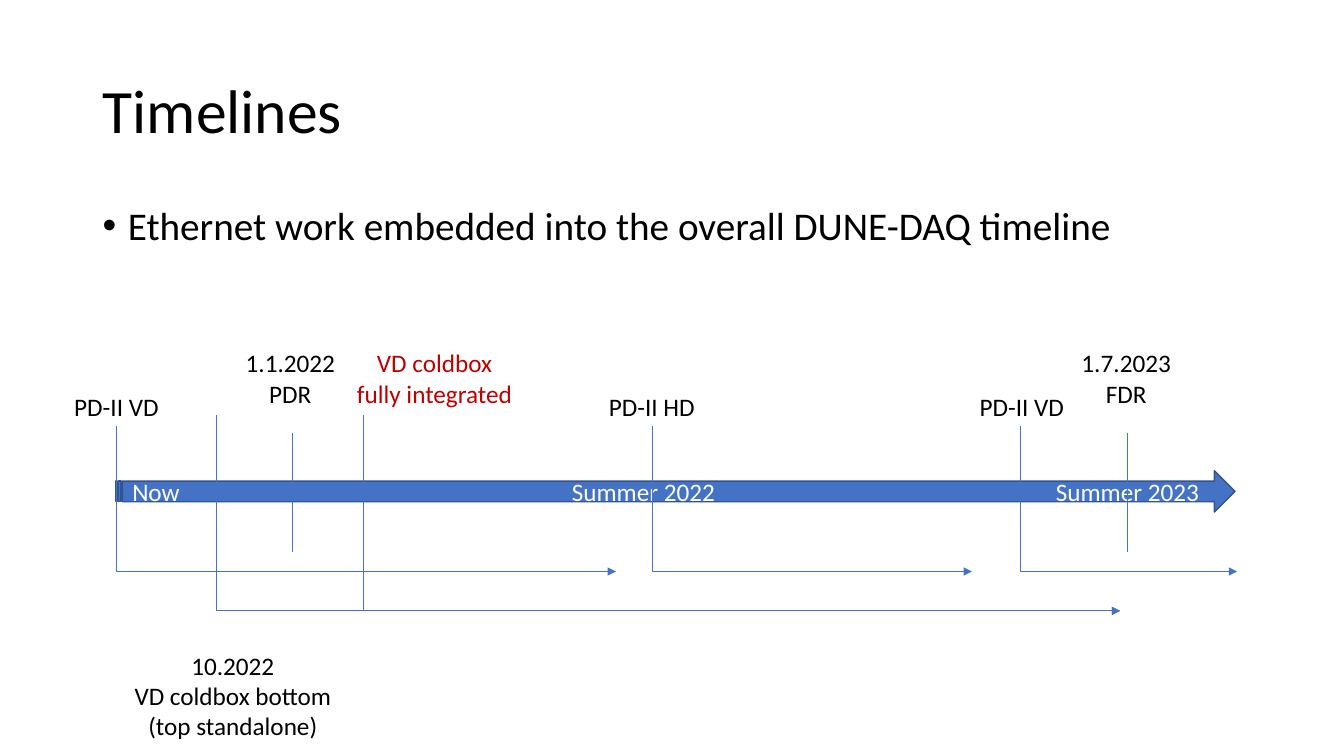
import pptx
import pptx.util
import pptx.dml.color
import pptx.enum.shapes
import pptx.enum.text
import pptx.oxml
from pptx.oxml.ns import qn

Inches = pptx.util.Inches
Pt = pptx.util.Pt
Align = pptx.enum.text.PP_ALIGN
Anchor = pptx.enum.text.MSO_ANCHOR
Fit = pptx.enum.text.MSO_AUTO_SIZE
Link = pptx.enum.shapes.MSO_CONNECTOR
BLACK, WHITE, RED, BLUE, NAVY = "000000", "FFFFFF", "C00000", "4472C4", "325491"


def color(code):
    return pptx.dml.color.RGBColor.from_string(code)


def node(parent, tag, **attrs):
    """Append a DrawingML element to parent."""
    item = pptx.oxml.parse_xml(
        f'<a:{tag} xmlns:a="http://schemas.openxmlformats.org/drawingml/2006/main"/>')
    for key, value in attrs.items():
        item.set(key, str(value))
    parent.append(item)
    return item


class Board:
    face = "Calibri"

    def __init__(self, slide):
        self.slide = slide
        self.shapes = slide.shapes

    def style(self, para, size, tint, align):
        para.alignment = align
        para.font.name = self.face
        para.font.size = Pt(size)
        para.font.color.rgb = color(tint)

    def title(self, text, left, top, width, height):
        box = self.shapes.title
        box.left, box.top, box.width, box.height = map(Inches, (left, top, width, height))
        frame = box.text_frame
        frame.text = text
        frame.auto_size = Fit.NONE
        frame.vertical_anchor = Anchor.MIDDLE
        frame.paragraphs[0].line_spacing = 0.9
        self.style(frame.paragraphs[0], 44, BLACK, Align.LEFT)

    def bullet(self, text, left, top, width, height):
        box = self.shapes.add_textbox(*map(Inches, (left, top, width, height)))
        frame = box.text_frame
        frame.word_wrap = True
        frame.text = text
        para = frame.paragraphs[0]
        para.line_spacing = 0.9
        props = para._p.get_or_add_pPr()
        props.set("marL", str(Inches(0.25)))
        props.set("indent", str(-Inches(0.25)))
        node(props, "buFont", typeface="Arial")
        node(props, "buChar", char="•")
        self.style(para, 28, BLACK, Align.LEFT)

    def label(self, text, left, top, width, height, tint=BLACK):
        box = self.shapes.add_textbox(*map(Inches, (left, top, width, height)))
        frame = box.text_frame
        frame.word_wrap = False
        frame.auto_size = Fit.SHAPE_TO_FIT_TEXT
        frame.text = text
        for para in frame.paragraphs:
            self.style(para, 18, tint, Align.CENTER)

    def axis(self, dates, stops, left, top, width, height):
        """Draw the striped arrow with its dates set at tab stops."""
        arrow = self.shapes.add_shape(
            pptx.enum.shapes.MSO_SHAPE.STRIPED_RIGHT_ARROW,
            *map(Inches, (left, top, width, height)))
        arrow.shadow.inherit = False
        arrow.fill.solid()
        arrow.fill.fore_color.rgb = color(BLUE)
        arrow.line.color.rgb = color(NAVY)
        arrow.line.width = Pt(1)
        frame = arrow.text_frame
        frame.vertical_anchor = Anchor.MIDDLE
        frame.text = "\t".join(dates)
        para = frame.paragraphs[0]
        tabs = node(para._p.get_or_add_pPr(), "tabLst")
        for stop in stops:
            node(tabs, "tab", pos=Inches(stop), algn="l")
        self.style(para, 18, WHITE, Align.LEFT)

    def line(self, kind, start, end, weight):
        wire = self.shapes.add_connector(kind, *map(Inches, start + end))
        wire.line.color.rgb = color(BLUE)
        wire.line.width = Pt(weight)
        node(wire._element.spPr, "effectLst")
        return wire

    def tick(self, x):
        self.line(Link.STRAIGHT, (x, 4.3), (x, 5.48), 1)

    def span(self, x, top, end, base):
        """Drop from the label, then run right to an arrowhead."""
        wire = self.line(Link.ELBOW, (x, top), (end, base), 0.5)
        node(wire.line._get_or_add_ln(), "tailEnd", type="triangle")
        guides = wire._element.spPr.find(qn("a:prstGeom")).find(qn("a:avLst"))
        node(guides, "gd", name="adj1", fmla="val 0")


def main():
    deck = pptx.Presentation()
    deck.slide_width, deck.slide_height = Inches(13.33), Inches(7.5)
    board = Board(deck.slides.add_slide(deck.slide_layouts[5]))

    board.title("Timelines", 0.92, 0.4, 11.5, 1.45)
    board.bullet("Ethernet work embedded into the overall DUNE-DAQ timeline",
                 0.92, 2, 11.12, 1.12)
    board.axis(("Now", "Summer 2022", "Summer 2023"), (4.36, 9.16),
               1.15, 4.67, 11.1, 0.41)

    for x in (2.9, 11.18):
        board.tick(x)
    for x, end in ((1.15, 6.11), (6.47, 9.64), (10.12, 12.27)):
        board.span(x, 4.23, end, 5.67)
    for x in (2.15, 3.6):
        board.span(x, 4.12, 11.11, 6.06)

    for text, left in (("PD-II VD", 0.63), ("PD-II HD", 5.94), ("PD-II VD", 9.61)):
        board.label(text, left, 3.83, 1.05, 0.4)
    for text, left in (("1.1.2022\nPDR", 2.33), ("1.7.2023\nFDR", 10.62)):
        board.label(text, left, 3.4, 1.1, 0.71)
    board.label("VD coldbox\vfully integrated", 3.43, 3.4, 1.76, 0.71, RED)
    board.label("10.2022\nVD coldbox bottom\n(top standalone)", 0.63, 6.4, 3.36, 1.01)

    deck.save("out.pptx")


if __name__ == "__main__":
    main()
